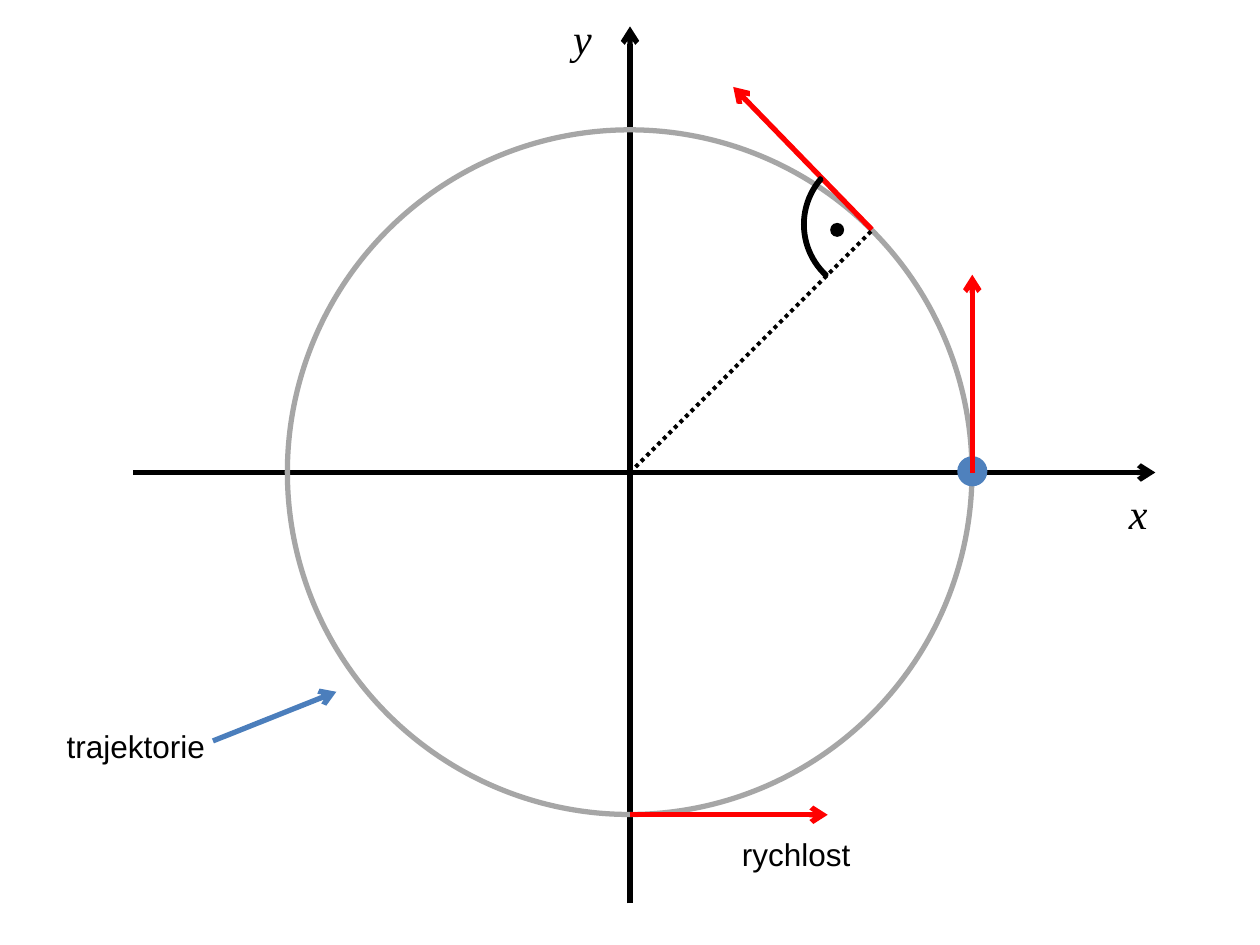
from lxml import etree
from pptx import Presentation
from pptx import util as u
from pptx.dml.color import RGBColor
from pptx.enum import dml, shapes, text
from pptx.oxml.ns import qn

BLACK, RED, GRAY = "000000", "FF0000", "A6A6A6"
BLUE, ARROW_BLUE = "4F81BD", "4B7EBC"
CENTER_X, CENTER_Y, RADIUS = 360, 270, 195.6
SPEED_LENGTH = 113


def color(hex_string):
    return RGBColor.from_string(hex_string)


def add_line(slide, start, end, line_color, width=3, arrow=True, dash=None):
    points = [u.Pt(value) for value in (*start, *end)]
    connector = slide.shapes.add_connector(shapes.MSO_CONNECTOR.STRAIGHT, *points)
    connector.line.color.rgb = color(line_color)
    connector.line.width = u.Pt(width)
    if dash:
        connector.line.dash_style = dash
    if arrow:
        line = connector.line._get_or_add_ln()
        etree.SubElement(line, qn("a:tailEnd"), type="arrow")
    etree.SubElement(connector._element.spPr, qn("a:effectLst"))
    return connector


def add_round(slide, center, radius, fill=None, line=None, width=3,
              kind=shapes.MSO_SHAPE.OVAL):
    x, y = center
    shape = slide.shapes.add_shape(kind, u.Pt(x - radius), u.Pt(y - radius),
                                   u.Pt(2 * radius), u.Pt(2 * radius))
    shape.shadow.inherit = False
    if fill:
        shape.fill.solid()
        shape.fill.fore_color.rgb = color(fill)
    else:
        shape.fill.background()
    if line:
        shape.line.color.rgb = color(line)
        shape.line.width = u.Pt(width)
    else:
        shape.line.fill.background()
    return shape


def add_label(slide, wording, left, top, width, height, size, font="Arial", italic=False):
    box = slide.shapes.add_textbox(u.Pt(left), u.Pt(top), u.Pt(width), u.Pt(height))
    frame = box.text_frame
    frame.word_wrap = True
    frame.auto_size = text.MSO_AUTO_SIZE.SHAPE_TO_FIT_TEXT
    paragraph = frame.paragraphs[0]
    paragraph.text = wording
    paragraph.font.name = font
    paragraph.font.size = u.Pt(size)
    paragraph.font.italic = italic
    paragraph.font.color.rgb = color(BLACK)


def add_axes(slide):
    add_line(slide, (76.3, CENTER_Y), (660.2, CENTER_Y), BLACK)
    add_line(slide, (CENTER_X, 516.2), (CENTER_X, 15.1), BLACK)
    for name, left, top in (("x", 638, 275), ("y", 320.4, 3.6)):
        add_label(slide, name, left, top, 79, 36, 24, "Times New Roman", True)


def add_trajectory(slide):
    add_round(slide, (CENTER_X - 0.2, CENTER_Y - 0.2), RADIUS, line=GRAY)
    # Moving point on the circle
    add_round(slide, (CENTER_X + RADIUS, CENTER_Y - 0.7), 8.6, fill=BLUE)
    add_label(slide, "trajektorie", 31, 411.8, 164, 29, 18)
    add_line(slide, (121.7, 423.4), (192.2, 395.3), ARROW_BLUE)


def add_velocities(slide):
    bottom, right = CENTER_Y + RADIUS, CENTER_X + RADIUS
    add_line(slide, (CENTER_X, bottom), (CENTER_X + SPEED_LENGTH, bottom), RED)
    add_line(slide, (right, CENTER_Y), (right, CENTER_Y - SPEED_LENGTH), RED)
    add_line(slide, (498.2, 131.2), (419, 49.7), RED)
    add_label(slide, "rychlost", 416.9, 473.8, 175.7, 29, 18)


def add_right_angle(slide):
    add_line(slide, (CENTER_X, CENTER_Y), (498.2, 131.8), BLACK, 2.25,
             arrow=False, dash=dml.MSO_LINE.ROUND_DOT)
    arc = add_round(slide, (499, 128.2), 40.3, fill=BLUE, line=BLACK, width=2,
                    kind=shapes.MSO_SHAPE.BLOCK_ARC)
    arc.rotation = 221.2
    for index, value in enumerate((162.77, 0, 0.016)):
        arc.adjustments[index] = value
    add_round(slide, (478.4, 131.4), 4, fill=BLACK)


def main():
    presentation = Presentation()
    presentation.slide_width = u.Pt(720)
    presentation.slide_height = u.Pt(540)
    slide = presentation.slides.add_slide(presentation.slide_layouts[6])
    add_axes(slide)
    add_trajectory(slide)
    add_velocities(slide)
    add_right_angle(slide)
    presentation.save("out.pptx")


if __name__ == "__main__":
    main()
